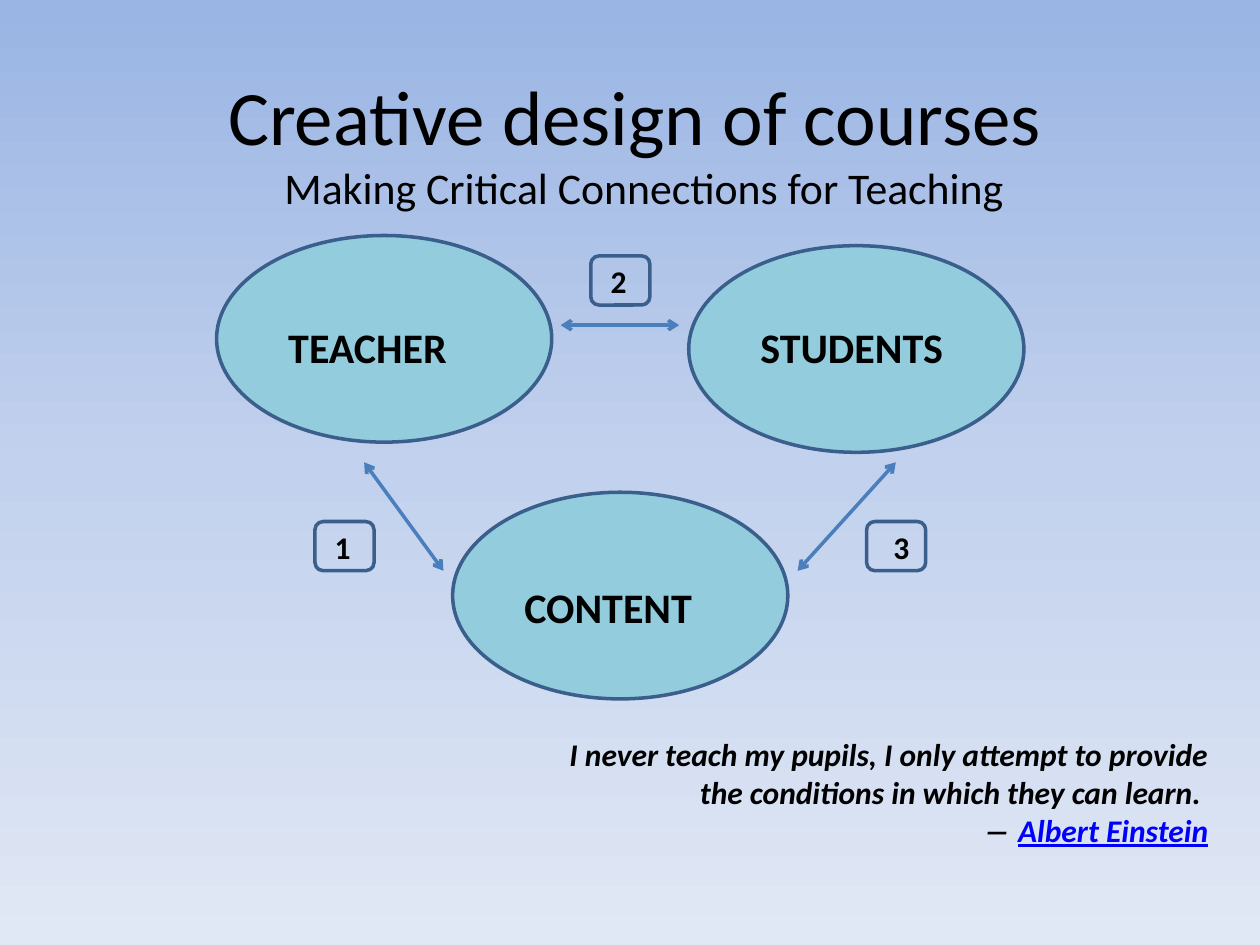
"""Build a slide linking teacher, students and content."""
from copy import deepcopy

from lxml.etree import SubElement
from pptx import Presentation
from pptx.dml.color import RGBColor
from pptx.enum.shapes import MSO_CONNECTOR as Connector, MSO_SHAPE as Shape
from pptx.enum.text import MSO_ANCHOR as Anchor, PP_ALIGN as Align
from pptx.oxml.ns import qn
from pptx.util import Pt

OUTLINE, ARROW, OVAL, BLACK = "3A5F8C", "4B7EBC", "93CDDD", "000000"


def rgb(code):
    return RGBColor.from_string(code)


def paint_background(slide, colours):
    fill = slide.background.fill
    fill.gradient()
    fill.gradient_angle = 270
    stop_list = slide.element.find(".//" + qn("a:gsLst"))
    stop_list.append(deepcopy(stop_list[-1]))
    for index, (stop, colour) in enumerate(zip(fill.gradient_stops, colours)):
        stop.position = index / (len(colours) - 1)
        stop.color.rgb = rgb(colour)


def add_outlined(slide, kind, left, top, width, height, colour=None):
    outlined = slide.shapes.add_shape(kind, Pt(left), Pt(top), Pt(width), Pt(height))
    outlined.shadow.inherit = False
    if colour:
        outlined.fill.solid()
        outlined.fill.fore_color.rgb = rgb(colour)
    else:
        outlined.fill.background()
    outlined.line.color.rgb = rgb(OUTLINE)
    outlined.line.width = Pt(2)


def add_double_arrow(slide, x1, y1, x2, y2):
    arrow = slide.shapes.add_connector(
        Connector.STRAIGHT, Pt(x1), Pt(y1), Pt(x2), Pt(y2))
    arrow.line.color.rgb = rgb(ARROW)
    arrow.line.width = Pt(2)
    outline = arrow.line._get_or_add_ln()
    for end in ("a:headEnd", "a:tailEnd"):
        SubElement(outline, qn(end), type="arrow")
    SubElement(arrow._element.spPr, qn("a:effectLst"))


def add_frame(slide, left, top, width, height, anchor=Anchor.TOP):
    frame = slide.shapes.add_textbox(Pt(left), Pt(top), Pt(width), Pt(height)).text_frame
    frame.word_wrap = True
    frame.vertical_anchor = anchor
    return frame


def style(paragraph, size, align=Align.LEFT, bold=False, italic=False):
    paragraph.alignment = align
    font = paragraph.font
    font.name, font.size, font.bold, font.italic = "Calibri", Pt(size), bold, italic
    font.color.rgb = rgb(BLACK)


def add_label(slide, text, left, top, width, height, size, inset=7.2):
    frame = add_frame(slide, left, top, width, height)
    frame.margin_left = Pt(inset)
    frame.margin_right = 0
    frame.text = text
    style(frame.paragraphs[0], size, bold=True)


def add_title(slide):
    frame = add_frame(slide, 61.9, 22.3, 612, 115.9, Anchor.MIDDLE)
    frame.text = "Creative design of courses \nMaking Critical Connections for Teaching"
    for paragraph, size in zip(frame.paragraphs, (44, 25)):
        style(paragraph, size, Align.CENTER)


def add_quote(slide):
    frame = add_frame(slide, 303.8, 416.2, 393.8, 72.7, Anchor.MIDDLE)
    frame.text = ("I never teach my pupils, I only attempt to provide "
                  "the conditions in which they can learn. \n― ")
    author = frame.paragraphs[1].add_run()
    author.text = "Albert Einstein"
    author.font.underline = True
    author.font.color.rgb = rgb("0000FF")
    for paragraph in frame.paragraphs:
        style(paragraph, 18, Align.RIGHT, bold=True, italic=True)


def main():
    deck = Presentation()
    deck.slide_width, deck.slide_height = Pt(720), Pt(540)
    slide = deck.slides.add_slide(deck.slide_layouts[6])
    paint_background(slide, ("9AB5E4", "C2D1ED", "E1E8F5"))
    add_title(slide)

    roles = (
        ("TEACHER", 123.8, 134.6, 157.6, 180),
        ("CONTENT", 258.7, 281.3, 292.5, 329),
        ("STUDENTS", 393.6, 140.4, 427.4, 180),
    )
    for role, left, top, label_left, label_top in roles:
        add_outlined(slide, Shape.OVAL, left, top, 191.5, 118.1, OVAL)
        add_label(slide, role, label_left, label_top, 135, 36, 24)

    for ends in ((320.4, 185.8, 388.1, 185.8),
                 (511.9, 264.2, 455.8, 326.2),
                 (208.1, 264.2, 253.4, 326.2)):
        add_double_arrow(slide, *ends)

    badges = (("1", 180, 298, 11.3), ("2", 337.6, 146.2, 11.3), ("3", 495.2, 298, 15.3))
    for number, left, top, inset in badges:
        add_outlined(slide, Shape.ROUNDED_RECTANGLE, left, top, 33.8, 28.1)
        add_label(slide, number, left, top, 33.8, 28.8, 18, inset)

    add_quote(slide)
    deck.save("out.pptx")


if __name__ == "__main__":
    main()
